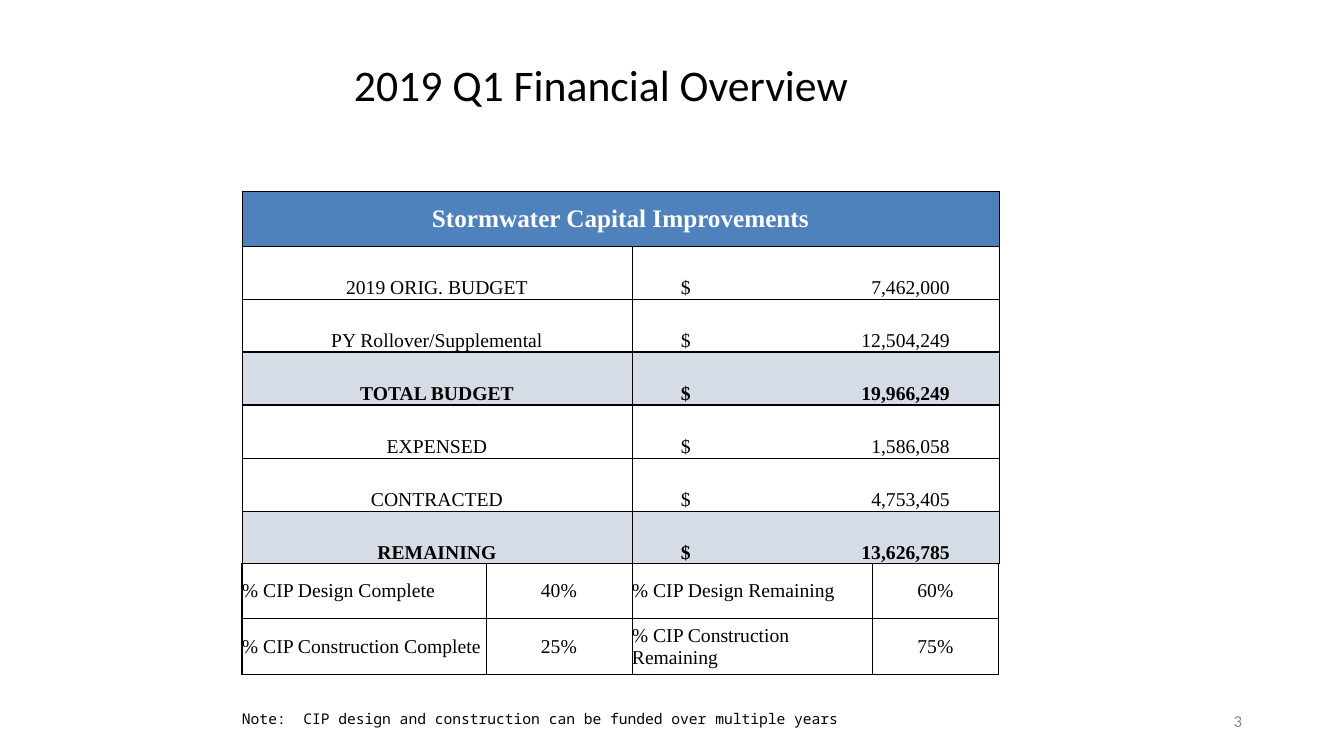
from lxml.etree import SubElement
from pptx import Presentation
from pptx.dml.color import RGBColor
from pptx.enum.text import MSO_ANCHOR as Anchor, PP_ALIGN as Align
from pptx.oxml.ns import qn
from pptx.util import Emu, Pt

COLORS = {"black": "000000", "white": "FFFFFF", "header": "4F81BD",
          "total": "D6DCE5", "number": "8C8C8C"}
SERIF = "Times New Roman"
COLUMNS = [244, 146, 240, 127]
ROWS = [55] + [53] * 6 + [55, 56, 27, 27]
AMOUNT_INDENT, AMOUNT_TAB = 49, 269
THIN, THICK = 0.5, 1

BUDGET = [
    ("2019 ORIG. BUDGET", "7,462,000"),
    ("PY Rollover/Supplemental", "12,504,249"),
    ("TOTAL BUDGET", "19,966,249"),
    ("EXPENSED", "1,586,058"),
    ("CONTRACTED", "4,753,405"),
    ("REMAINING", "13,626,785"),
]
TOTALS = ("TOTAL BUDGET", "REMAINING")
PROGRESS = [
    ("% CIP Design Complete", "40%", "% CIP Design Remaining", "60%"),
    ("% CIP Construction Complete", "25%", "% CIP Construction Remaining", "75%"),
]
NOTE = "Note:  CIP design and construction can be funded over multiple years"


def px(length):
    return Emu(round(length * 914400 / 100.8))


def rgb(name):
    return RGBColor.from_string(COLORS[name])


def write(frame, text, size, font, color="black", bold=False, align=Align.LEFT):
    para = frame.paragraphs[0]
    para.alignment = align
    span = para.add_run()
    span.text = text
    span.font.size = Pt(size)
    span.font.name = font
    span.font.bold = bold
    span.font.color.rgb = rgb(color)
    return para


def set_borders(cell, left=THIN, right=THIN, top=THIN, bottom=THIN):
    props = cell._tc.get_or_add_tcPr()
    for side, width in zip("LRTB", (left, right, top, bottom)):
        line = SubElement(props, qn(f"a:ln{side}"), w=str(Pt(width)))
        if width:
            fill = SubElement(line, qn("a:solidFill"))
            SubElement(fill, qn("a:srgbClr"), val=COLORS["black"])
        else:
            SubElement(line, qn("a:noFill"))


def format_cells(table, row, first, last, fill=None, anchor=Anchor.MIDDLE, **borders):
    """Merge a stretch of one row, style it and return its first cell."""
    for column in range(first, last + 1):
        cell = table.cell(row, column)
        cell.margin_left = cell.margin_right = 0
        cell.margin_top = cell.margin_bottom = 0
        cell.vertical_anchor = anchor
        set_borders(cell, **borders)
        if fill:
            cell.fill.solid()
            cell.fill.fore_color.rgb = rgb(fill)
        else:
            cell.fill.background()
    start = table.cell(row, first)
    if last > first:
        start.merge(table.cell(row, last))
    return start


def add_budget_row(table, row, label, amount):
    total = label in TOTALS
    look = {"fill": "total" if total else None, "anchor": Anchor.BOTTOM,
            "top": THICK if row in (3, 4) else THIN,
            "bottom": THICK if row in (3, 6) else THIN}
    name = format_cells(table, row, 0, 1, **look)
    write(name.text_frame, label, 14, SERIF, bold=total, align=Align.CENTER)
    value = format_cells(table, row, 2, 3, **look)
    value.margin_left = px(AMOUNT_INDENT)
    para = write(value.text_frame, f"$\t{amount}", 14, SERIF, bold=total)
    tabs = SubElement(para._p.find(qn("a:pPr")), qn("a:tabLst"))
    SubElement(tabs, qn("a:tab"), pos=str(px(AMOUNT_TAB)), algn="r")


def add_progress_row(table, row, texts):
    for column, text in enumerate(texts):
        cell = format_cells(table, row, column, column,
                            left=THICK if column == 0 else THIN,
                            right=THICK if column == 3 else THIN,
                            top=THICK if row == 7 else THIN,
                            bottom=THICK if row == 8 else THIN)
        align = Align.CENTER if column % 2 else Align.LEFT
        write(cell.text_frame, text, 14, SERIF, align=align)


def add_blank_cell(table, row, column, top=0):
    cell = format_cells(table, row, column, column,
                        left=0, right=0, top=top, bottom=0)
    # A small end mark keeps the row from growing
    SubElement(cell.text_frame.paragraphs[0]._p, qn("a:endParaRPr"), sz="1000")


def add_capital_table(page):
    frame = page.shapes.add_table(len(ROWS), len(COLUMNS), px(242), px(191),
                                  px(sum(COLUMNS)), px(sum(ROWS)))
    table = frame.table
    table.first_row = table.horz_banding = False
    for column, width in zip(table.columns, COLUMNS):
        column.width = px(width)
    for row, height in zip(table.rows, ROWS):
        row.height = px(height)

    # Heading
    heading = format_cells(table, 0, 0, 3, fill="header")
    write(heading.text_frame, "Stormwater Capital Improvements", 18, SERIF,
          "white", True, Align.CENTER)

    # Budget and progress
    for row, (label, amount) in enumerate(BUDGET, 1):
        add_budget_row(table, row, label, amount)
    for row, texts in enumerate(PROGRESS, 7):
        add_progress_row(table, row, texts)

    # Spacer and note
    for column in range(4):
        add_blank_cell(table, 9, column, top=THICK)
    note = format_cells(table, 10, 0, 2, anchor=Anchor.BOTTOM,
                        left=0, right=0, top=0, bottom=0)
    write(note.text_frame, NOTE, 10.5, "Noto Sans Mono")
    add_blank_cell(table, 10, 3)


def add_title(page, text):
    title = page.shapes.title
    title.left, title.top, title.width, title.height = map(px, (203, 42, 806, 84))
    title.text_frame.vertical_anchor = Anchor.MIDDLE
    write(title.text_frame, text, 31.2, "Calibri", align=Align.CENTER)


def add_page_number(page, text):
    box = page.shapes.add_textbox(px(950), px(701), px(302), px(40))
    box.text_frame.word_wrap = True
    box.text_frame.vertical_anchor = Anchor.MIDDLE
    write(box.text_frame, text, 12, "Calibri", "number", align=Align.RIGHT)


def main():
    deck = Presentation()
    deck.slide_width, deck.slide_height = px(1344), px(756)
    page = deck.slides.add_slide(deck.slide_layouts[5])
    add_page_number(page, "3")
    add_title(page, "2019 Q1 Financial Overview ")
    add_capital_table(page)
    deck.save("out.pptx")


if __name__ == "__main__":
    main()
